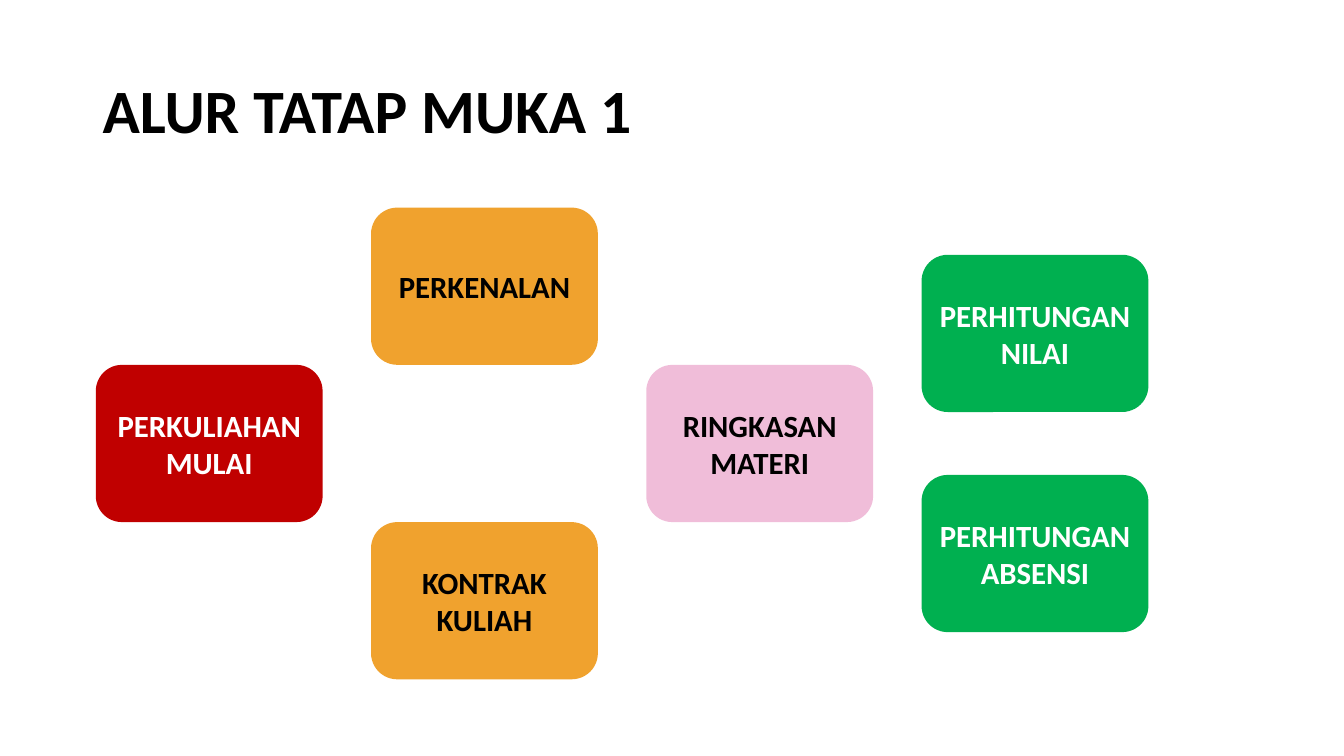
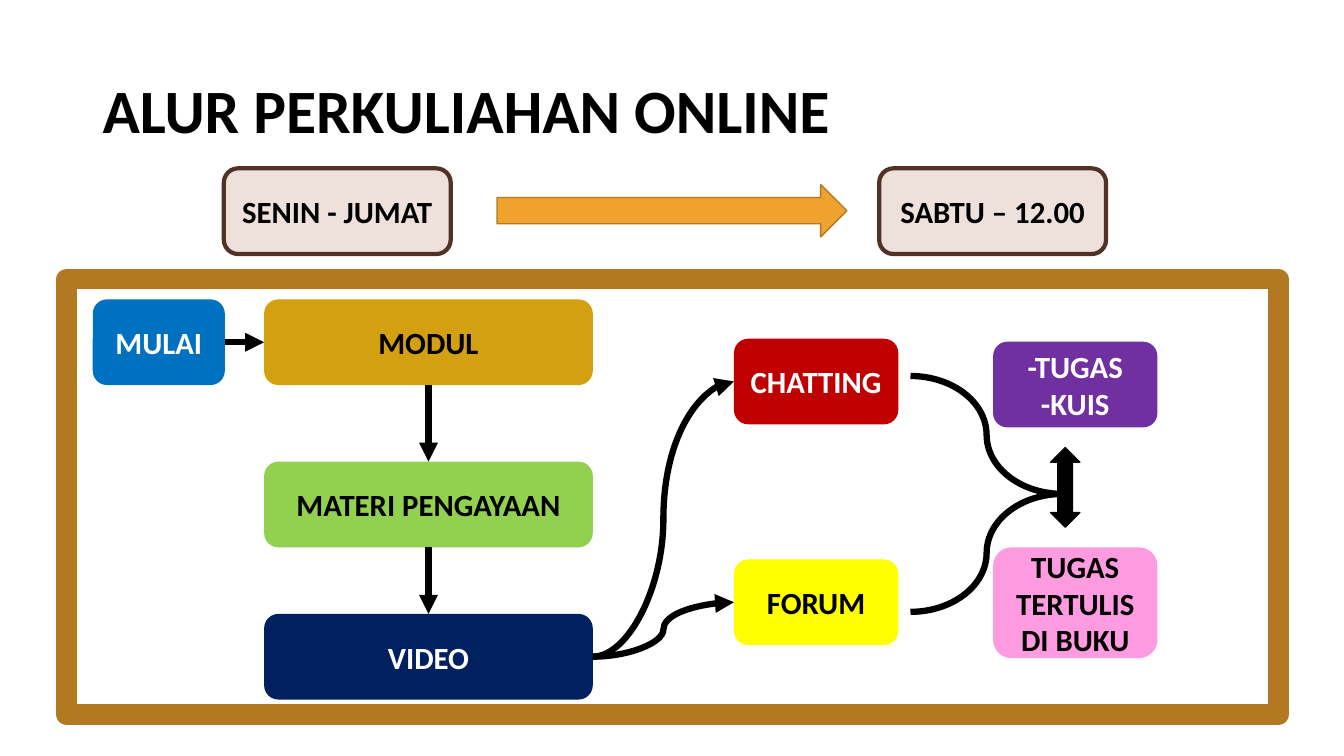
from lxml import etree
from pptx import Presentation
from pptx import util as u
from pptx.dml.color import RGBColor
from pptx.enum import shapes, text
from pptx.oxml.ns import qn

FONT = "Calibri"
BLACK, WHITE = "000000", "FFFFFF"
RED, ORANGE, GREEN, BROWN = "C00000", "F0A22E", "00B050", "B27822"
SHAPE = shapes.MSO_SHAPE
LINE = shapes.MSO_CONNECTOR
TOP, LEFT, BOTTOM, RIGHT = range(4)  # connection sites of a box


def color(value):
    return RGBColor.from_string(value)


def write(sp, lines, size, ink, align):
    tf = sp.text_frame
    tf.word_wrap = True
    tf.vertical_anchor = text.MSO_ANCHOR.MIDDLE
    tf.text = lines
    for p in tf.paragraphs:
        p.alignment = align
        font = p.font
        font.name, font.size, font.bold = FONT, u.Pt(size), True
        font.color.rgb = color(ink)


def add_slide(prs, title):
    s = prs.slides.add_slide(prs.slide_layouts[6])
    sp = s.shapes.add_textbox(*map(u.Inches, (0.92, 0.4, 11.5, 1.45)))
    write(sp, title, 44, BLACK, text.PP_ALIGN.LEFT)
    sp.text_frame.paragraphs[0].line_spacing = 0.9
    return s


def add_shape(s, kind, at, fill=None, line=None, width=1):
    sp = s.shapes.add_shape(kind, *map(u.Inches, at))
    sp.shadow.inherit = False
    if fill:
        sp.fill.solid()
        sp.fill.fore_color.rgb = color(fill)
    else:
        sp.fill.background()
    if line:
        sp.line.color.rgb = color(line)
        sp.line.width = u.Pt(width)
    else:
        sp.line.fill.background()
    return sp


def add_box(s, label, at, fill, ink=BLACK, line=None):
    """Rounded box with a centred bold label."""
    sp = add_shape(s, SHAPE.ROUNDED_RECTANGLE, at, fill, line, 3)
    write(sp, label, 22, ink, text.PP_ALIGN.CENTER)
    return sp


def add_arrow(s, kind, start, start_site, end, end_site):
    """Arrow that is glued to two boxes."""
    cn = s.shapes.add_connector(kind, 0, 0, 0, 0)
    cn.begin_connect(start, start_site)
    cn.end_connect(end, end_site)
    cn.line.color.rgb = color(BLACK)
    cn.line.width = u.Pt(4.5)
    etree.SubElement(cn.line._get_or_add_ln(), qn("a:tailEnd"), type="triangle")
    etree.SubElement(cn._element.spPr, qn("a:effectLst"))


def meeting_slide(prs):
    s = add_slide(prs, "ALUR TATAP MUKA 1")
    left, top, pitch, w, h = 0.95, 2.06, 2.73, 2.25, 1.56
    for label, col, row, fill, ink in (
        ("PERKULIAHAN MULAI", 0, 1, RED, WHITE),
        ("PERKENALAN", 1, 0, ORANGE, BLACK),
        ("KONTRAK KULIAH", 1, 2, ORANGE, BLACK),
        ("RINGKASAN MATERI", 2, 1, "F0BDD9", BLACK),
        ("PERHITUNGAN NILAI", 3, 0.3, GREEN, WHITE),
        ("PERHITUNGAN ABSENSI", 3, 1.7, GREEN, WHITE),
    ):
        add_box(s, label, (left + col * pitch, top + row * h, w, h), fill, ink)


def online_slide(prs):
    s = add_slide(prs, "ALUR PERKULIAHAN ONLINE")
    h = 0.85
    # Left edge and width of each column of boxes
    begin, study, talk, task = (0.92, 1.31), (2.62, 3.26), (7.28, 1.63), (9.85, 1.63)

    def step(label, col, top, fill, ink=BLACK, height=h):
        return add_box(s, label, (col[0], top, col[1], height), fill, ink)

    start = step("MULAI", begin, 2.97, "0070C0", WHITE)
    module = step("MODUL", study, 2.97, "D2A010")
    material = step("MATERI PENGAYAAN", study, 4.58, "92D050")
    video = step("VIDEO", study, 6.09, "002060", WHITE)
    chat = step("CHATTING", talk, 3.36, RED, WHITE)
    forum = step("FORUM", talk, 5.55, "FFFF00")
    step("-TUGAS\n-KUIS", task, 3.39, "7030A0", WHITE)
    step("TUGAS TERTULIS\nDI BUKU", task, 5.43, "FF9BE1", height=1.1)

    for label, left in (("SENIN - JUMAT", 2.22), ("SABTU – 12.00", 8.72)):
        add_box(s, label, (left, 1.67, 2.25, h), "EEE0DB", line="523227")
    add_shape(s, SHAPE.RECTANGLE, (0.66, 2.77, 12.02, 4.32), line=BROWN, width=14.5)
    add_shape(s, SHAPE.RIGHT_ARROW, (4.93, 1.83, 3.47, 0.52), ORANGE, BROWN)

    add_arrow(s, LINE.STRAIGHT, start, RIGHT, module, LEFT)
    for upper, lower in ((module, material), (material, video)):
        add_arrow(s, LINE.STRAIGHT, upper, BOTTOM, lower, TOP)
    for target in (chat, forum):
        add_arrow(s, LINE.CURVE, video, RIGHT, target, LEFT)

    brace = add_shape(s, SHAPE.LEFT_BRACE, (9.03, 3.73, 1.51, 2.34), line=BLACK, width=4.5)
    brace.rotation = 180
    brace.adjustments[0] = 0.39
    add_shape(s, SHAPE.UP_DOWN_ARROW, (10.42, 4.44, 0.29, 0.79), BLACK, BLACK)


def main():
    prs = Presentation()
    prs.slide_width, prs.slide_height = u.Inches(13.33), u.Inches(7.5)
    meeting_slide(prs)
    online_slide(prs)
    prs.save("out.pptx")


if __name__ == "__main__":
    main()
